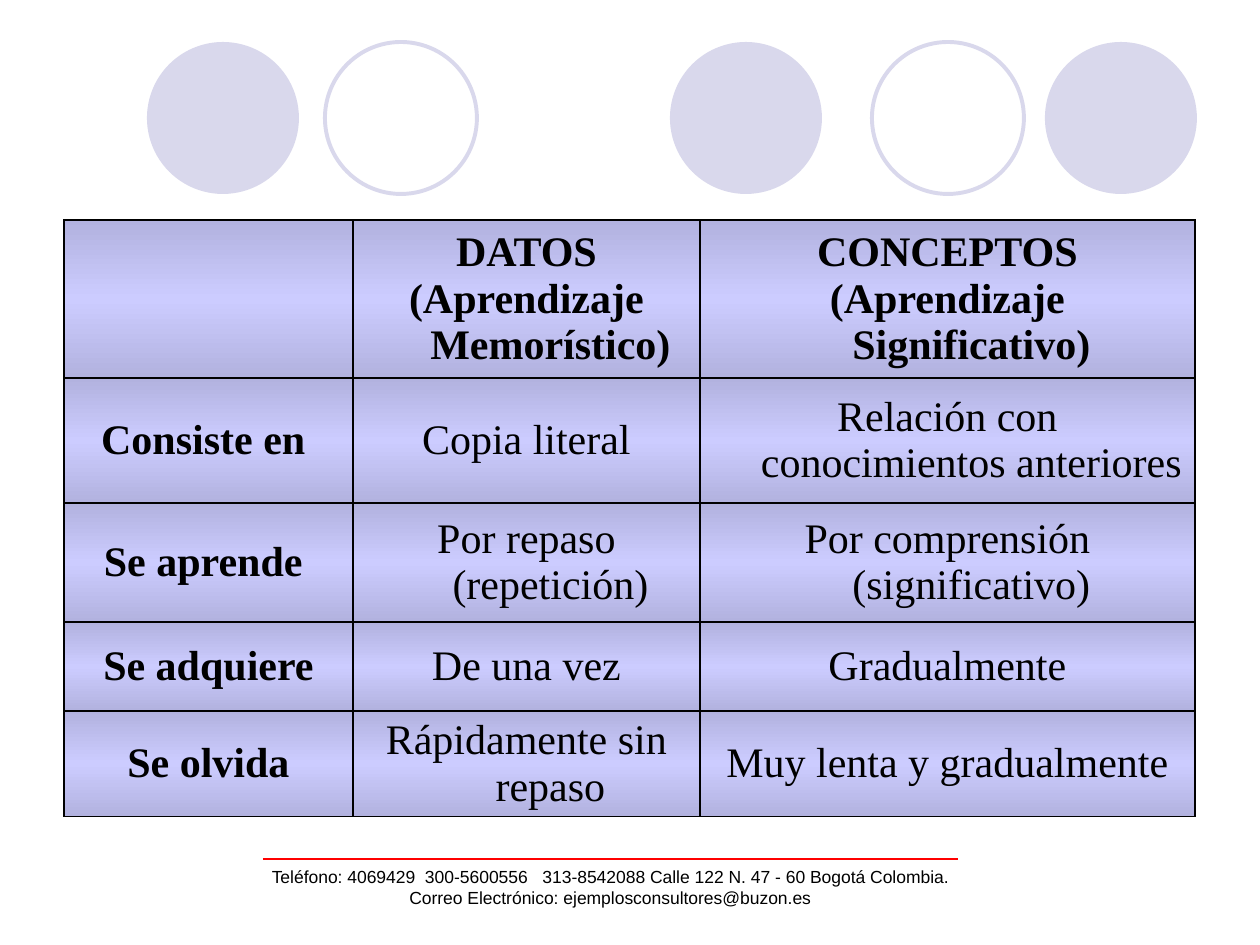
from lxml import etree
from pptx import Presentation
from pptx.dml.color import RGBColor
from pptx.enum import shapes, text
from pptx.oxml import parse_xml
from pptx.oxml.ns import nsdecls, qn
from pptx.util import Pt

PX = 914400 // 126  # EMU in one px

COLORS = {"circle": "D9D8EC", "rule": "FF0000", "text": "000000",
          "border": "000000", "cell": "CCCCFF"}

ROWS = [
    ["", "DATOS\n(Aprendizaje Memorístico)", "CONCEPTOS\n(Aprendizaje Significativo)"],
    ["Consiste en ", "Copia literal", "Relación con conocimientos anteriores"],
    ["Se aprende ", "Por repaso (repetición)", "Por comprensión (significativo)"],
    ["Se adquiere", "De una vez", "Gradualmente"],
    ["Se olvida", "Rápidamente sin repaso", "Muy lenta y gradualmente"],
]
FOOTER = ("Teléfono: 4069429  300-5600556   313-8542088 Calle 122 N. 47 - 60 Bogotá Colombia.\n"
          "Correo Electrónico: ejemplosconsultores@buzon.es")


def rgb(name):
    return RGBColor.from_string(COLORS[name])


def write(tf, content, font="Arial", size=10, bold=False, hanging=0):
    """Write centred paragraphs, one for each line of content."""
    for i, line in enumerate(content.split("\n")):
        p = tf.paragraphs[0] if i == 0 else tf.add_paragraph()
        p.alignment = text.PP_ALIGN.CENTER
        if hanging:
            pPr = p._p.get_or_add_pPr()
            pPr.set("marL", str(hanging * PX))
            pPr.set("indent", str(-hanging * PX))
        r = p.add_run()
        r.text = line
        r.font.name, r.font.size, r.font.bold = font, Pt(size), bold
        r.font.color.rgb = rgb("text")


def add_circles(slide, x, y, size):
    # Offset from the left edge, and whether the circle is filled
    for dx, filled in [(0, True), (178, False), (523, True), (725, False), (898, True)]:
        sp = slide.shapes.add_shape(shapes.MSO_SHAPE.OVAL, (x + dx) * PX, y * PX,
                                    size * PX, size * PX)
        sp.shadow.inherit = False
        if filled:
            sp.fill.solid()
            sp.fill.fore_color.rgb = rgb("circle")
            sp.line.fill.background()
        else:
            sp.fill.background()
            sp.line.color.rgb = rgb("circle")
            sp.line.width = Pt(2.25)


def style_cell(cell):
    """Give a cell black borders and a fill that darkens to top and bottom."""
    cell.vertical_anchor = text.MSO_ANCHOR.MIDDLE
    tcPr = cell._tc.get_or_add_tcPr()
    for side in "LRTB":
        tcPr.append(parse_xml(
            f'<a:ln{side} {nsdecls("a")} w="12700"><a:solidFill>'
            f'<a:srgbClr val="{COLORS["border"]}"/></a:solidFill></a:ln{side}>'))
    light = f'<a:srgbClr val="{COLORS["cell"]}"/>'
    dark = f'<a:srgbClr val="{COLORS["cell"]}"><a:shade val="73725"/></a:srgbClr>'
    stops = "".join(f'<a:gs pos="{pos}">{color}</a:gs>'
                    for pos, color in [(0, dark), (50000, light), (100000, dark)])
    tcPr.append(parse_xml(
        f'<a:gradFill {nsdecls("a")} rotWithShape="1"><a:gsLst>{stops}</a:gsLst>'
        '<a:lin ang="5400000" scaled="1"/></a:gradFill>'))


def add_comparison(slide, x, y, widths, heights):
    table = slide.shapes.add_table(len(heights), len(widths), x * PX, y * PX,
                                   sum(widths) * PX, sum(heights) * PX).table
    table.first_row = table.horz_banding = False
    for column, width in zip(table.columns, widths):
        column.width = width * PX
    for i, (row, height) in enumerate(zip(table.rows, heights)):
        row.height = height * PX
        for j, cell in enumerate(row.cells):
            style_cell(cell)
            if ROWS[i][j]:
                write(cell.text_frame, ROWS[i][j], font="Times New Roman", size=24,
                      bold=i == 0 or j == 0, hanging=48)


def add_footer(slide, x, y, w, h):
    # Rule above the contact details
    rule = slide.shapes.add_connector(shapes.MSO_CONNECTOR.STRAIGHT, (x + 70) * PX,
                                      y * PX, (x + 765) * PX, y * PX)
    rule.line.color.rgb = rgb("rule")
    rule.line.width = Pt(0.75)
    etree.SubElement(rule._element.spPr, qn("a:effectLst"))
    # Contact details
    tf = slide.shapes.add_textbox(x * PX, (y + 1) * PX, w * PX, h * PX).text_frame
    tf.word_wrap = True
    write(tf, FOOTER)


def main():
    prs = Presentation()
    prs.slide_width, prs.slide_height = 1260 * PX, 945 * PX
    slide = prs.slides.add_slide(prs.slide_layouts[6])
    add_circles(slide, 147, 42, 152)
    add_comparison(slide, 64, 220, widths=[289, 347, 495],
                   heights=[158, 125, 119, 89, 105])
    add_footer(slide, 193, 859, 834, 63)
    prs.save("out.pptx")


if __name__ == "__main__":
    main()
